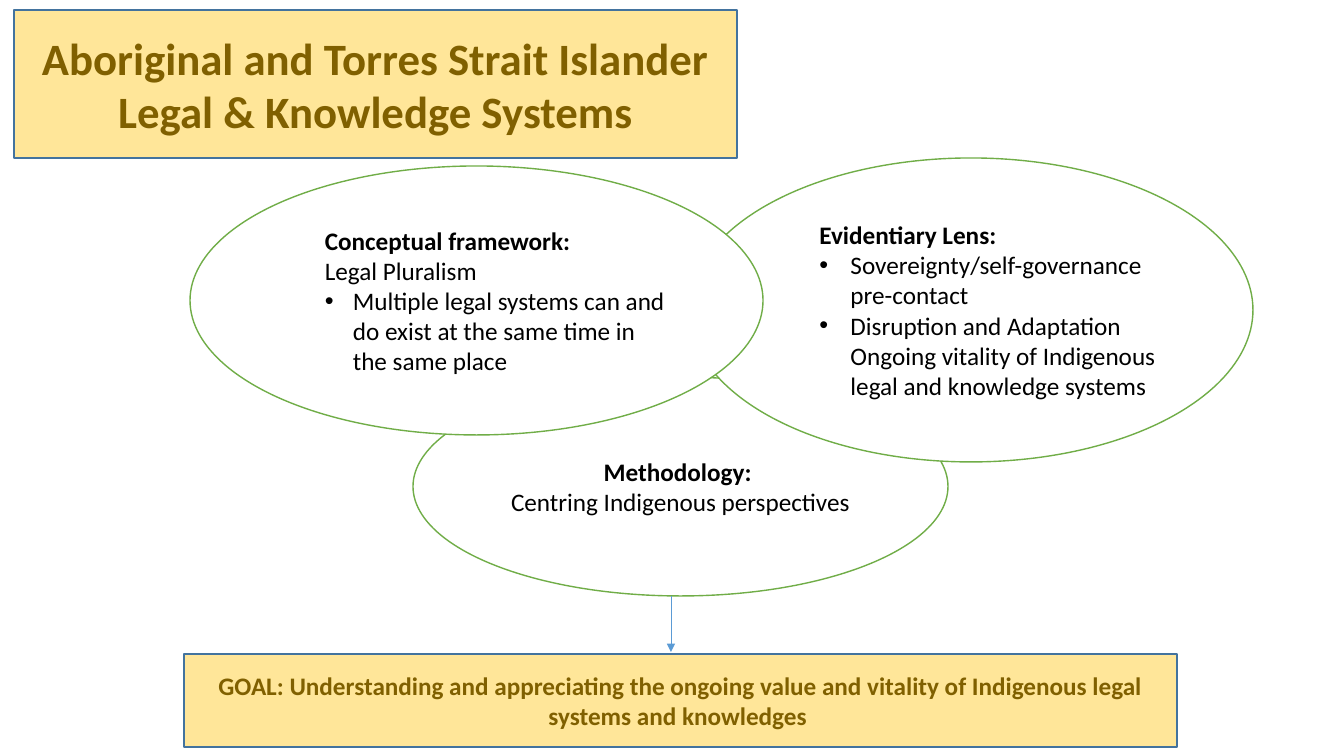
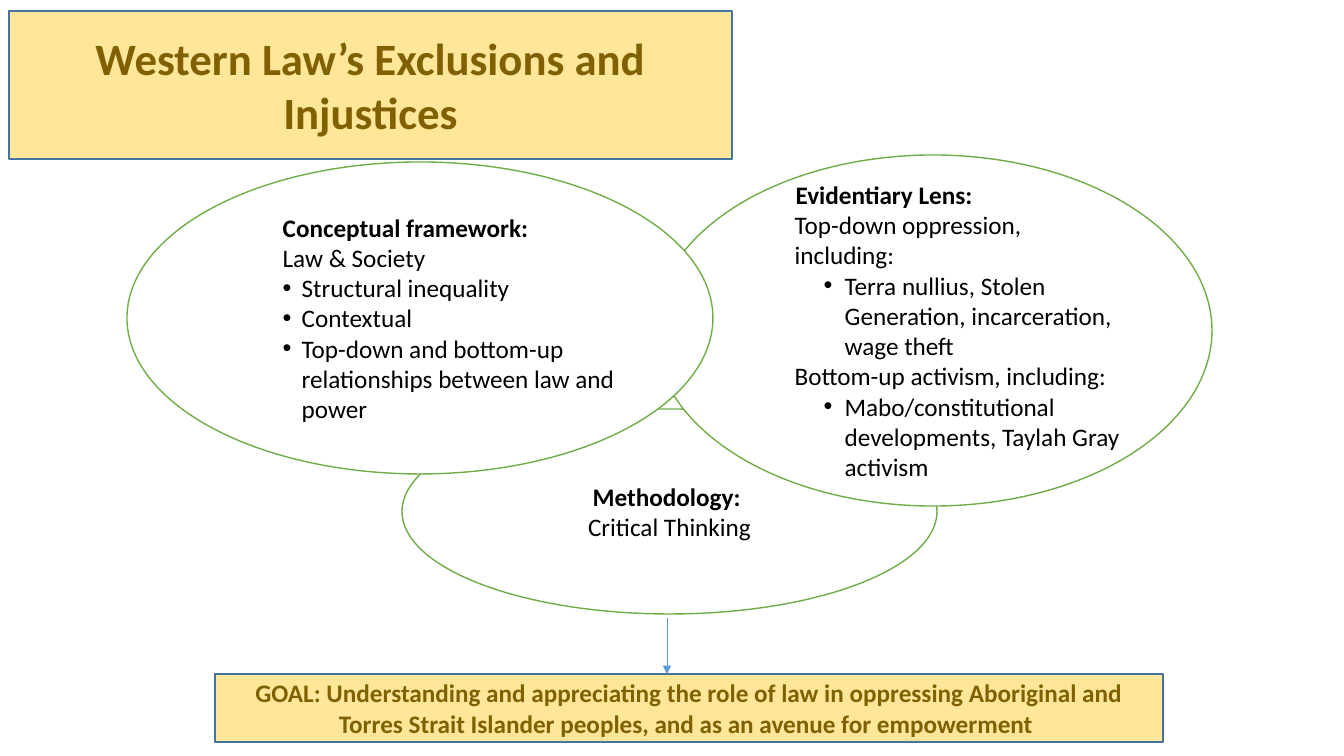
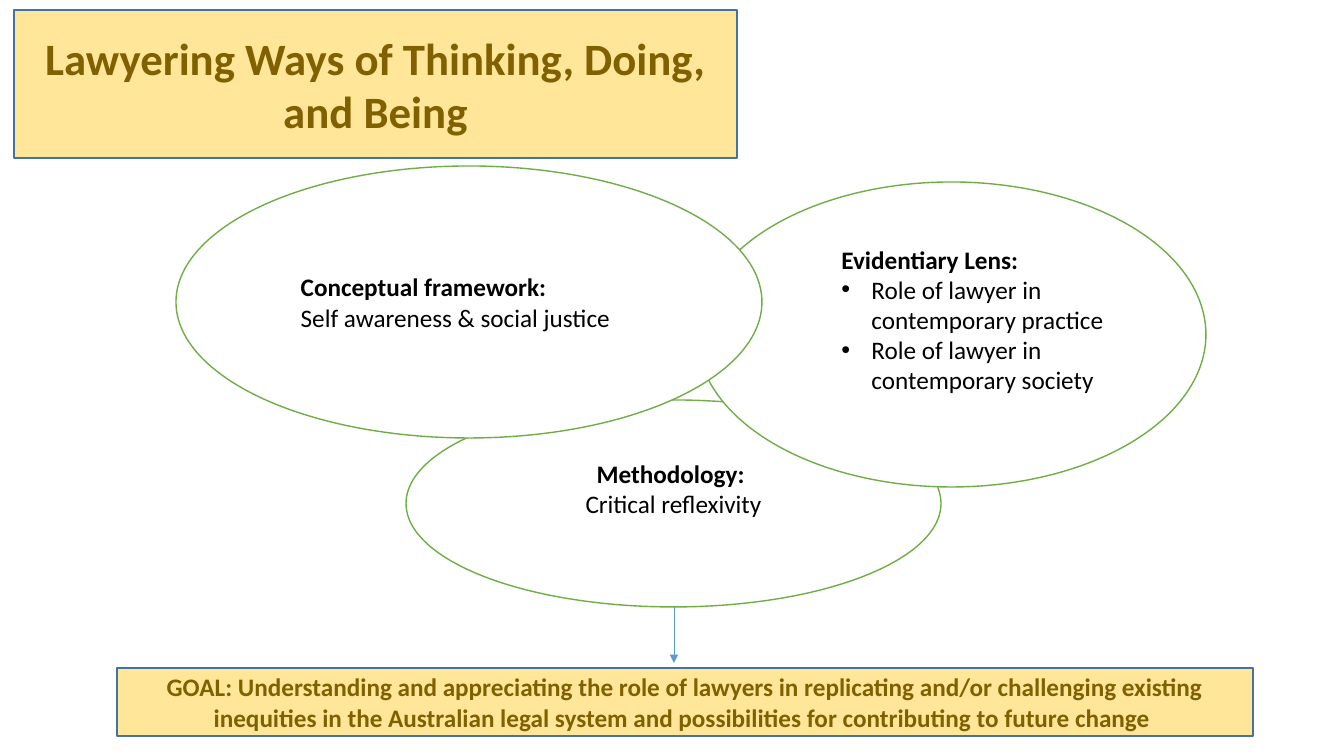
from lxml.etree import SubElement
from pptx import Presentation
from pptx.dml.color import RGBColor
from pptx.enum.shapes import MSO_CONNECTOR, MSO_SHAPE
from pptx.enum.text import MSO_ANCHOR, MSO_AUTO_SIZE, PP_ALIGN
from pptx.oxml.ns import qn
from pptx.util import Emu, Pt

PX = 914400 / 100.8
FONT = "Calibri"
GOLD, BROWN, BLUE = "FFE699", "806000", "43739E"
WHITE, BLACK, GREEN, ARROW = "FFFFFF", "000000", "70AD47", "5B9BD5"
LINE_HEIGHT = 30


def px(length):
    return Emu(round(length * PX))


def write(shape, text, size=18, color=BLACK, bold=False, align=PP_ALIGN.LEFT,
          margin=0, indent=0, bullet=False, first=False):
    """Add one paragraph to a shape."""
    frame = shape.text_frame
    par = frame.paragraphs[0] if first else frame.add_paragraph()
    par.alignment = align
    run = par.add_run()
    run.text = text
    run.font.name, run.font.size, run.font.bold = FONT, Pt(size), bold
    run.font.color.rgb = RGBColor.from_string(color)
    props = par._p.get_or_add_pPr()
    props.set("marL", str(px(margin)))
    props.set("indent", str(px(indent)))
    if bullet:
        SubElement(props, qn("a:buFont"), typeface="Arial")
        SubElement(props, qn("a:buChar"), char="•")
    else:
        SubElement(props, qn("a:buNone"))


def panel(shape, fill, line):
    """Give a shape its fill, outline and text frame settings."""
    shape.fill.solid()
    shape.fill.fore_color.rgb = RGBColor.from_string(fill)
    shape.line.color.rgb = RGBColor.from_string(line)
    shape.line.width = Pt(1)
    frame = shape.text_frame
    frame.word_wrap = True
    frame.auto_size = MSO_AUTO_SIZE.NONE
    frame.vertical_anchor = MSO_ANCHOR.MIDDLE


# Ellipses: heading, box, lines of rest text to leave free below, and
# paragraphs as (text, margin, indent, bullet); a margin of None is centred
CONCEPT, EVIDENCE, METHOD = "Conceptual framework:", "Evidentiary Lens:", "Methodology: "
topics = [
    dict(
        title="Aboriginal and Torres Strait Islander Legal & Knowledge Systems",
        title_at=(14, 10),
        ellipses=[
            (METHOD, (413, 377, 535, 219), 0, None, 0, [
                ("Centring Indigenous perspectives", None, 0, False)]),
            (EVIDENCE, (689, 158, 564, 304), 0, 69, -31, [
                ("Sovereignty/self-governance pre-contact", 69, -31, True),
                ("Disruption and Adaptation Ongoing vitality of Indigenous legal "
                 "and knowledge systems", 69, -31, True)]),
            (CONCEPT, (190, 166, 573, 269), 0, 69, -28, [
                ("Legal Pluralism", 69, -28, False),
                ("Multiple legal systems can and do exist at the same time in "
                 "the same place", 69, -28, True)]),
        ],
        arrow=(671, 596),
        goal="GOAL: Understanding and appreciating the ongoing value and vitality "
             "of Indigenous legal systems and knowledges ",
        goal_at=(184, 654, 993, 93)),
    dict(
        title="Western Law’s Exclusions and Injustices",
        title_at=(9, 11),
        ellipses=[
            (METHOD, (402, 409, 535, 205), 0, None, 0, [
                ("Critical Thinking", None, 0, False)]),
            (EVIDENCE, (654, 155, 558, 351), 0, 99, -49, [
                ("Top-down oppression, including:", 49, 0, False),
                ("Terra nullius, Stolen Generation, incarceration, wage theft",
                 99, -21, True),
                ("Bottom-up activism, including:", 49, 0, False),
                ("Mabo/constitutional developments, Taylah Gray activism",
                 99, -21, True)]),
            (CONCEPT, (127, 162, 586, 312), 0, 79, -19, [
                ("Law & Society", 79, -19, False),
                ("Structural inequality", 79, -19, True),
                ("Contextual", 79, -19, True),
                ("Top-down and bottom-up relationships between law and power",
                 79, -19, True)]),
        ],
        arrow=(667, 618),
        goal="GOAL: Understanding and appreciating the role of law in oppressing "
             "Aboriginal and Torres Strait Islander peoples, and as an avenue for "
             "empowerment ",
        goal_at=(215, 674, 948, 68)),
    dict(
        title="Lawyering Ways of Thinking, Doing, and Being",
        title_at=(14, 10),
        ellipses=[
            (METHOD, (406, 400, 535, 207), 1, None, 0, [
                ("Critical reflexivity", None, 0, False)]),
            (EVIDENCE, (697, 182, 509, 305), 1, 90, -30, [
                ("Role of lawyer in contemporary practice", 90, -30, True),
                ("Role of lawyer in contemporary society", 90, -30, True)]),
            (CONCEPT, (176, 166, 586, 272), 0, 29, 0, [
                ("Self awareness & social justice", 29, 0, False)]),
        ],
        arrow=(674, 607),
        goal="GOAL: Understanding and appreciating the role of lawyers in "
             "replicating and/or challenging existing inequities in the Australian "
             "legal system and possibilities for contributing to future change ",
        goal_at=(117, 668, 1136, 68)),
]

deck = Presentation()
deck.slide_width, deck.slide_height = px(1344), px(756)
title_only = deck.slide_layouts[5]

for topic in topics:
    slide = deck.slides.add_slide(title_only)
    shapes = slide.shapes

    # Title band
    title = shapes.title
    title.left, title.top, title.width, title.height = map(px, (*topic["title_at"], 723, 148))
    panel(title, GOLD, BLUE)
    write(title, topic["title"], size=32, color=BROWN, bold=True,
          align=PP_ALIGN.CENTER, first=True)

    # Overlapping ellipses, from back to front
    for heading, box, free_lines, margin, indent, points in topic["ellipses"]:
        ellipse = shapes.add_shape(MSO_SHAPE.OVAL, *map(px, box))
        ellipse.shadow.inherit = False
        panel(ellipse, WHITE, GREEN)
        ellipse.text_frame.margin_bottom = px(5 + free_lines * LINE_HEIGHT)
        align = PP_ALIGN.CENTER if margin is None else PP_ALIGN.LEFT
        write(ellipse, heading, bold=True, align=align, margin=margin or 0,
              indent=indent, first=True)
        for text, left, hang, bullet in points:
            write(ellipse, text, align=align, margin=left or 0, indent=hang, bullet=bullet)

    # Arrow down to the goal
    x, top = topic["arrow"]
    arrow = shapes.add_connector(MSO_CONNECTOR.STRAIGHT, px(x), px(top), px(x), px(top + 56))
    arrow.line.color.rgb = RGBColor.from_string(ARROW)
    arrow.line.width = Pt(0.5)
    SubElement(arrow.line._get_or_add_ln(), qn("a:tailEnd"), type="triangle")
    SubElement(arrow._element.spPr, qn("a:effectLst"))

    # Goal band
    goal = shapes.add_shape(MSO_SHAPE.RECTANGLE, *map(px, topic["goal_at"]))
    goal.shadow.inherit = False
    panel(goal, GOLD, BLUE)
    write(goal, topic["goal"], color=BROWN, bold=True, align=PP_ALIGN.CENTER, first=True)

deck.save("out.pptx")
